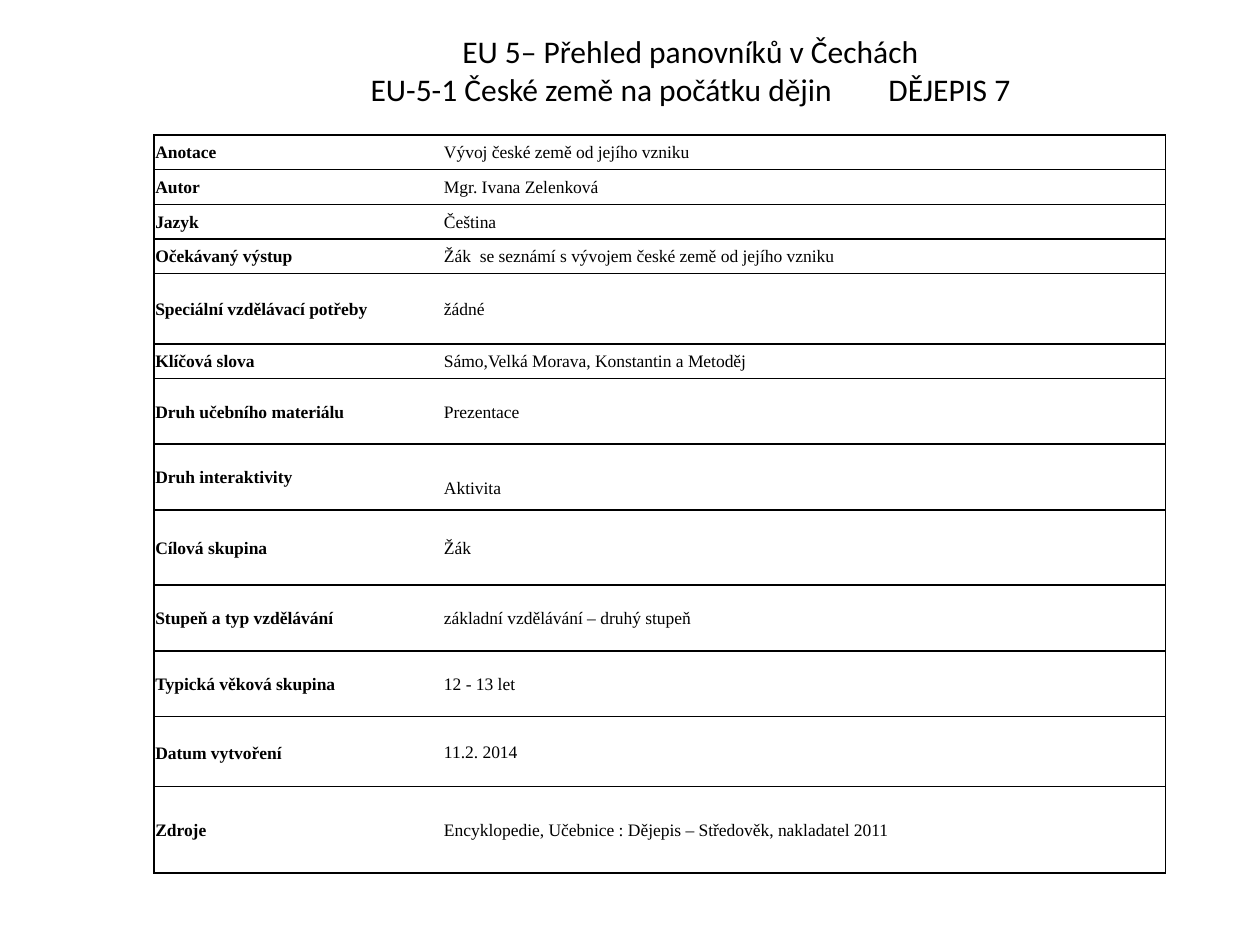
from lxml import etree
from pptx import Presentation
from pptx.dml.color import RGBColor
from pptx.enum.text import MSO_ANCHOR, PP_ALIGN
from pptx.oxml.ns import qn
from pptx.util import Cm, Pt

CENTER, LEFT = PP_ALIGN.CENTER, PP_ALIGN.LEFT
MIDDLE, BOTTOM = MSO_ANCHOR.MIDDLE, MSO_ANCHOR.BOTTOM

COLORS = {"text": "000000", "border": "000000"}

TITLE = [
    "EU 5– Přehled panovníků v Čechách",
    "EU-5-1 České země na počátku dějin\tDĚJEPIS 7",
]
SUBJECT_TAB = 10.44

# label, value, row height in cm
ROWS = [
    ("Anotace", "Vývoj české země od jejího vzniku", 0.7),
    ("Autor", "Mgr. Ivana Zelenková", 0.7),
    ("Jazyk", "Čeština", 0.7),
    ("Očekávaný výstup", "Žák  se seznámí s vývojem české země od jejího vzniku", 0.7),
    ("Speciální vzdělávací potřeby", "žádné", 1.42),
    ("Klíčová slova", "Sámo,Velká Morava, Konstantin a Metoděj", 0.7),
    ("Druh učebního materiálu", "Prezentace", 1.32),
    ("Druh interaktivity", "Aktivita", 1.33),
    ("Cílová skupina", "Žák", 1.51),
    ("Stupeň a typ vzdělávání", "základní vzdělávání – druhý stupeň", 1.33),
    ("Typická věková skupina", "12 - 13 let", 1.32),
    ("Datum vytvoření", "11.2. 2014", 1.41),
    ("Zdroje", "Encyklopedie, Učebnice : Dějepis – Středověk, nakladatel 2011", 1.74),
]
COLUMN_WIDTHS = [5.82, 14.58]
CELL_MARGIN = 0.03
TEXT_LINE = 0.43
# Cells whose text sits one line off the usual place
LOWERED = "Aktivita"
RAISED_FROM_BOTTOM = "Datum vytvoření"

NO_STYLE = "{2D5ABB26-0587-4C30-8999-92F81FD0307C}"
CELL_SIDES = [("lnL", "lnT", "lnB"), ("lnR", "lnT", "lnB")]


def write_text(frame, lines, font, size, bold=False, align=LEFT, spacing=1.0):
    frame.word_wrap = True
    for index, line in enumerate(lines):
        paragraph = frame.paragraphs[0] if index == 0 else frame.add_paragraph()
        paragraph.alignment = align
        paragraph.line_spacing = spacing
        run = paragraph.add_run()
        run.text = line
        run.font.name = font
        run.font.size = Pt(size)
        run.font.bold = bold
        run.font.color.rgb = RGBColor.from_string(COLORS["text"])


def add_tab_stop(paragraph, position):
    tabs = etree.SubElement(paragraph._p.get_or_add_pPr(), qn("a:tabLst"))
    etree.SubElement(tabs, qn("a:tab"), pos=str(Cm(position)), algn="l")


def set_borders(cell, sides):
    properties = cell._tc.get_or_add_tcPr()
    for side in ("lnL", "lnR", "lnT", "lnB"):
        line = etree.SubElement(properties, qn(f"a:{side}"), w=str(Pt(1)))
        if side in sides:
            fill = etree.SubElement(line, qn("a:solidFill"))
            etree.SubElement(fill, qn("a:srgbClr"), val=COLORS["border"])
        else:
            etree.SubElement(line, qn("a:noFill"))


def fill_cell(cell, text, column):
    cell.margin_left = cell.margin_right = Cm(CELL_MARGIN)
    cell.margin_top = cell.margin_bottom = Cm(CELL_MARGIN)
    cell.vertical_anchor = MIDDLE
    if text == LOWERED:
        cell.margin_top = Cm(CELL_MARGIN + TEXT_LINE)
    elif text == RAISED_FROM_BOTTOM:
        cell.vertical_anchor = BOTTOM
        cell.margin_bottom = Cm(CELL_MARGIN + TEXT_LINE)
    write_text(cell.text_frame, [text], "Times New Roman", 10,
               bold=column == 0, spacing=1.07)
    set_borders(cell, CELL_SIDES[column])
    cell.fill.background()


def add_overview_table(slide):
    height = sum(row[2] for row in ROWS)
    frame = slide.shapes.add_table(len(ROWS), len(COLUMN_WIDTHS), Cm(3.1), Cm(2.72),
                                   Cm(sum(COLUMN_WIDTHS)), Cm(height))
    table = frame.table
    table.first_row = table.horz_banding = False
    table._tbl.tblPr.find(qn("a:tableStyleId")).text = NO_STYLE
    for column, width in zip(table.columns, COLUMN_WIDTHS):
        column.width = Cm(width)
    for index, (label, value, row_height) in enumerate(ROWS):
        table.rows[index].height = Cm(row_height)
        for column, text in enumerate((label, value)):
            fill_cell(table.cell(index, column), text, column)


def main():
    presentation = Presentation()
    presentation.slide_width, presentation.slide_height = Cm(25.4), Cm(19.05)
    slide = presentation.slides.add_slide(presentation.slide_layouts[6])

    title = slide.shapes.add_textbox(Cm(6.35), Cm(0.53), Cm(15.14), Cm(1.8))
    write_text(title.text_frame, TITLE, "Calibri", 18, align=CENTER)
    add_tab_stop(title.text_frame.paragraphs[1], SUBJECT_TAB)

    add_overview_table(slide)
    presentation.save("out.pptx")


if __name__ == "__main__":
    main()
